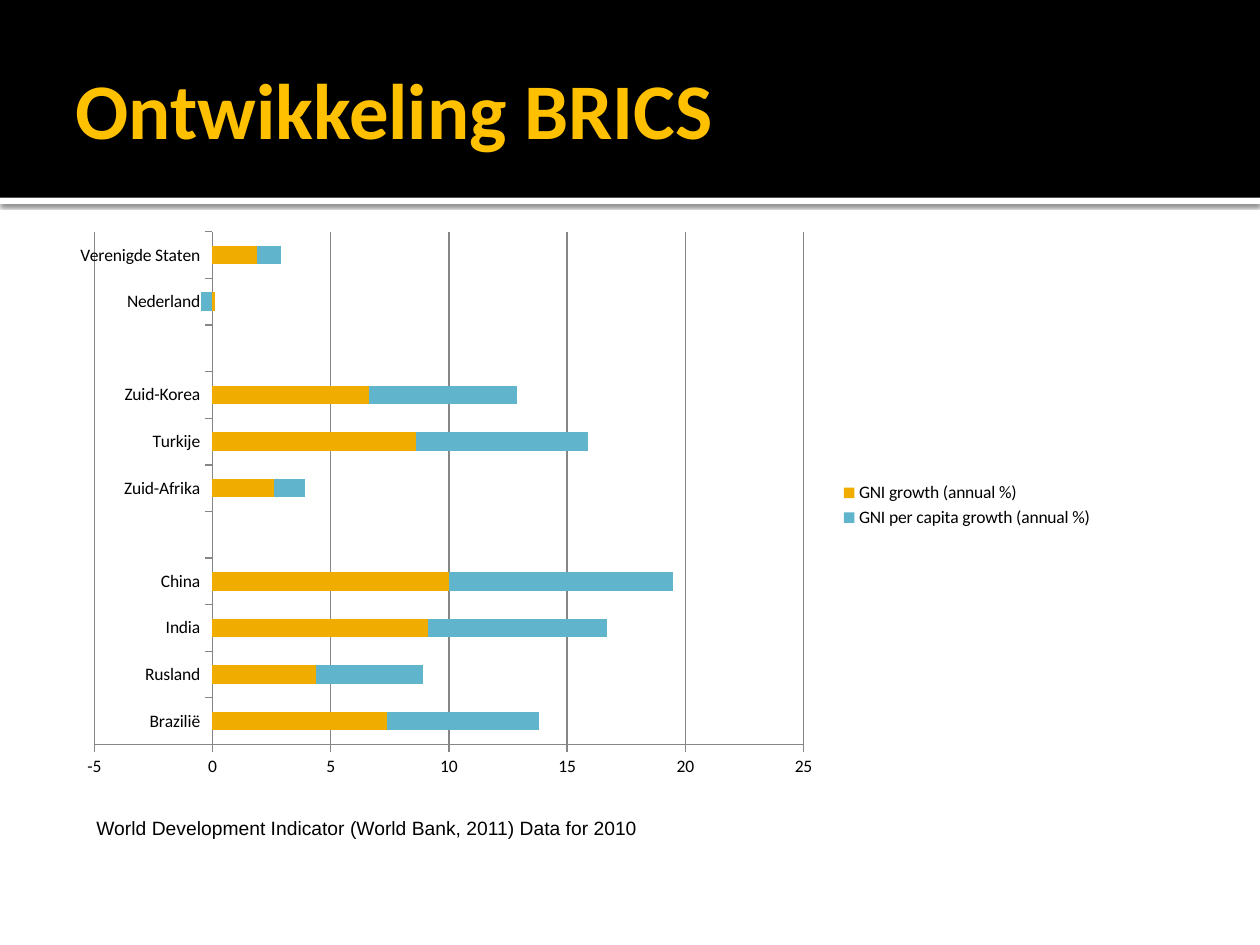
from dataclasses import dataclass

from lxml import etree
from pptx import Presentation
from pptx import util as u
from pptx.chart.data import CategoryChartData
from pptx.dml.color import RGBColor
from pptx.enum import chart as charts, shapes, text
from pptx.oxml import parse_xml
from pptx.oxml.ns import nsdecls, qn


@dataclass(frozen=True)
class Theme:
    background: str = "FFFFFF"
    band: str = "000000"
    title: str = "FFC000"
    body: str = "000000"
    axis: str = "868686"
    series: tuple = ("F0AD00", "60B5CC")
    heading_font: str = "Calibri"
    source_font: str = "Arial"
    title_size: float = 45
    source_size: float = 11
    chart_size: float = 10


class SlideBuilder:
    def __init__(self, slide, theme):
        self.slide = slide
        self.theme = theme
        fill = slide.background.fill
        fill.solid()
        fill.fore_color.rgb = RGBColor.from_string(theme.background)

    def place(self, shape, box):
        shape.left, shape.top, shape.width, shape.height = map(u.Pt, box)

    def style(self, font, name, size, color, bold=False):
        font.name = name
        font.size = u.Pt(size)
        font.bold = bold
        font.color.rgb = RGBColor.from_string(color)

    def band(self, box, color, shadow=False):
        """Add a full-width band behind the title placeholder."""
        shape = self.slide.shapes.add_shape(
            shapes.MSO_SHAPE.RECTANGLE, *map(u.Pt, box))
        shape.fill.solid()
        shape.fill.fore_color.rgb = RGBColor.from_string(color)
        shape.line.fill.background()
        shape.shadow.inherit = False
        if shadow:
            effects = shape._element.spPr.find(qn("a:effectLst"))
            effects.append(parse_xml(
                f'<a:outerShdw {nsdecls("a")} blurRad="{u.Pt(2.5)}" '
                f'dist="{u.Pt(0.8)}" dir="5400000" rotWithShape="0">'
                '<a:srgbClr val="000000"><a:alpha val="60000"/></a:srgbClr>'
                '</a:outerShdw>'))
        title = self.slide.shapes.title._element
        title.addprevious(shape._element)

    def title(self, box, wording):
        shape = self.slide.shapes.title
        self.place(shape, box)
        frame = shape.text_frame
        frame.vertical_anchor = text.MSO_ANCHOR.MIDDLE
        frame.margin_left = u.Pt(7.2)
        frame.margin_right = frame.margin_top = frame.margin_bottom = u.Pt(3.6)
        paragraph = frame.paragraphs[0]
        paragraph.alignment = text.PP_ALIGN.LEFT
        run = paragraph.add_run()
        run.text = wording
        self.style(run.font, self.theme.heading_font, self.theme.title_size,
                   self.theme.title, bold=True)

    def source(self, box, wording):
        shape = self.slide.shapes.add_textbox(*map(u.Pt, box))
        frame = shape.text_frame
        frame.word_wrap = True
        frame.auto_size = text.MSO_AUTO_SIZE.SHAPE_TO_FIT_TEXT
        run = frame.paragraphs[0].add_run()
        run.text = wording
        self.style(run.font, self.theme.source_font, self.theme.source_size,
                   self.theme.body)

    def stacked_bars(self, box, categories, series, plot_layout):
        data = CategoryChartData()
        data.categories = categories
        for name, values in series.items():
            data.add_series(name, values)
        chart = self.slide.shapes.add_chart(
            charts.XL_CHART_TYPE.BAR_STACKED, *map(u.Pt, box), data).chart
        chart.has_title = False
        self.style(chart.font, self.theme.heading_font, self.theme.chart_size,
                   self.theme.body)

        # Bars
        plot = chart.plots[0]
        plot.gap_width = 150
        plot.overlap = 100
        plot.vary_by_categories = False
        for bars, color in zip(plot.series, self.theme.series):
            bars.invert_if_negative = False
            bars.format.fill.solid()
            bars.format.fill.fore_color.rgb = RGBColor.from_string(color)

        # Axes and gridlines
        values = chart.value_axis
        values.minimum_scale, values.maximum_scale = -5, 25
        values.major_unit = 5
        values.has_major_gridlines = True
        values.tick_labels.number_format = "General"
        values.tick_labels.number_format_is_linked = False
        for axis in (chart.category_axis, values):
            axis.major_tick_mark = charts.XL_TICK_MARK.OUTSIDE
            axis.minor_tick_mark = charts.XL_TICK_MARK.NONE
        for part in (chart.category_axis, values, values.major_gridlines):
            part.format.line.width = u.Pt(0.75)
            part.format.line.color.rgb = RGBColor.from_string(self.theme.axis)

        # Legend
        chart.has_legend = True
        chart.legend.position = charts.XL_LEGEND_POSITION.RIGHT
        chart.legend.include_in_layout = False

        # Fixed inner plot area, as fractions of the chart
        area = chart._chartSpace.chart.plotArea
        for old in area.findall(qn("c:layout")):
            area.remove(old)
        layout = etree.Element(qn("c:layout"))
        manual = etree.SubElement(layout, qn("c:manualLayout"))
        settings = {"layoutTarget": "inner", "xMode": "edge", "yMode": "edge",
                    **dict(zip("xywh", plot_layout))}
        for tag, value in settings.items():
            etree.SubElement(manual, qn(f"c:{tag}")).set("val", str(value))
        area.insert(0, layout)


def main():
    presentation = Presentation()
    presentation.slide_width, presentation.slide_height = u.Pt(720), u.Pt(540)
    theme = Theme()
    slide = presentation.slides.add_slide(presentation.slide_layouts[5])
    builder = SlideBuilder(slide, theme)

    # Header
    builder.band((0, 113, 720, 3.6), theme.background, shadow=True)
    builder.band((0, 0, 720, 113), theme.band)
    builder.title((36, 12.25, 648, 98.65), "Ontwikkeling BRICS")

    # Growth by country
    categories = ["Brazilië", "Rusland", "India", "China", "", "Zuid-Afrika",
                  "Turkije", "Zuid-Korea", "", "Nederland",
                  "Verenigde Staten"]
    series = {
        "GNI growth (annual %)":
            [7.4, 4.4, 9.1, 10, None, 2.6, 8.6, 6.6, None, 0.1, 1.9],
        "GNI per capita growth (annual %)":
            [6.4, 4.5, 7.6, 9.5, None, 1.3, 7.3, 6.3, None, -0.5, 1],
    }
    builder.stacked_bars((36, 126, 596, 325.5), categories, series,
                         plot_layout=(0.03, 0.02, 0.68, 0.9))

    # Source line
    builder.source((48, 463, 414, 20.9),
                   "World Development Indicator (World Bank, 2011) "
                   "Data for 2010")

    presentation.save("out.pptx")


if __name__ == "__main__":
    main()
